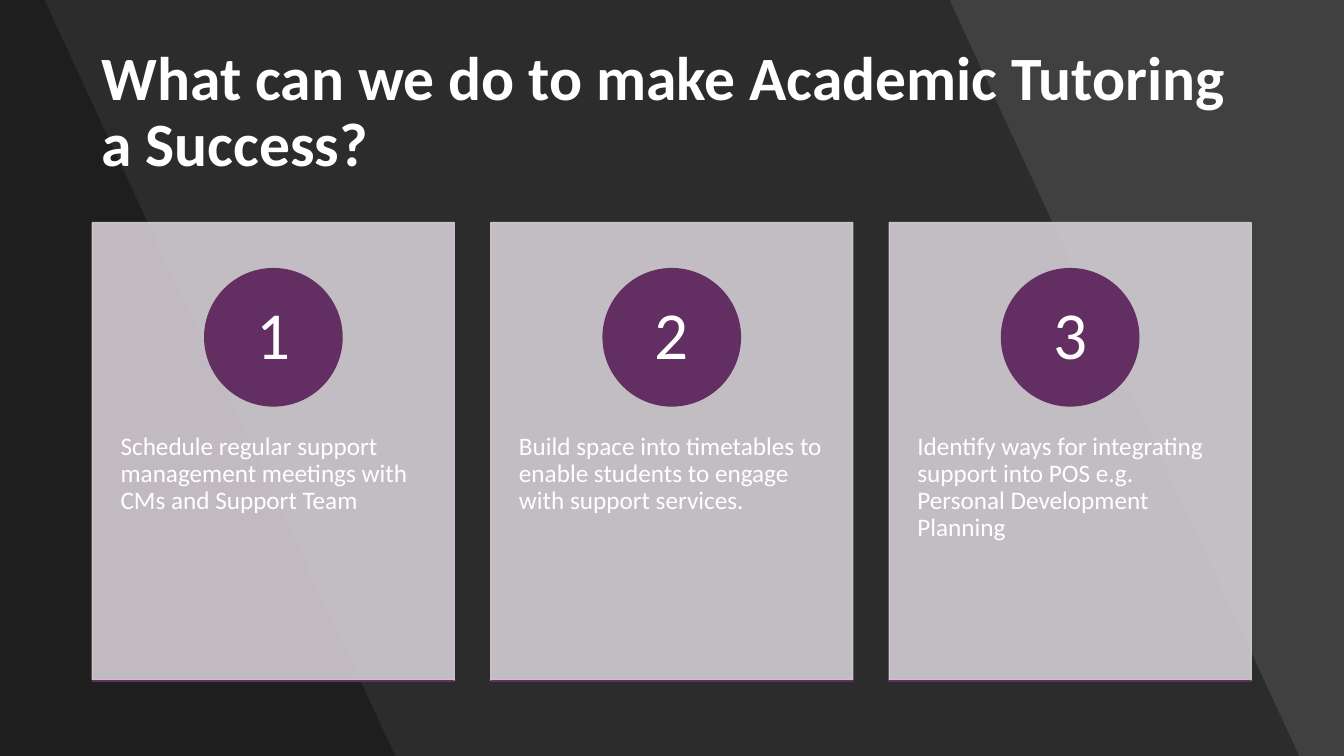
from lxml.etree import SubElement
from pptx import Presentation
from pptx.dml.color import RGBColor
from pptx.enum.shapes import MSO_CONNECTOR as Connector, MSO_SHAPE as Preset
from pptx.enum.text import MSO_ANCHOR as Anchor, PP_ALIGN as Align
from pptx.oxml.ns import qn
from pptx.util import Cm, Pt

WIDTH, HEIGHT = 33.87, 19.05
CARD_LEFT, CARD_TOP, CARD_WIDTH, CARD_HEIGHT = 2.33, 5.61, 9.12, 11.53
CARD_PITCH = 10.04
BADGE_SIZE = 3.46

ACTIONS = [
    "Schedule regular support management meetings with CMs and Support Team",
    "Build space into timetables to enable students to engage with support services.",
    "Identify ways for integrating support into POS e.g. Personal Development Planning",
]


def color(value):
    return RGBColor.from_string(value)


class Deck:
    font = "Calibri"
    background, shade, card, accent, text = "404040", "000000", "D3CDD3", "632E62", "FFFFFF"

    def __init__(self):
        self.presentation = Presentation()
        self.presentation.slide_width = Cm(WIDTH)
        self.presentation.slide_height = Cm(HEIGHT)
        self.slide = self.presentation.slides.add_slide(self.presentation.slide_layouts[6])
        backdrop = self.slide.background.fill
        backdrop.solid()
        backdrop.fore_color.rgb = color(self.background)

    def paint(self, shape, fill, outlined=True, opacity=100):
        shape.shadow.inherit = False
        shape.fill.solid()
        shape.fill.fore_color.rgb = color(fill)
        if outlined:
            shape.line.color.rgb = color(fill)
            shape.line.width = Pt(1)
        else:
            shape.line.fill.background()
        if opacity < 100:
            for tint in shape._element.spPr.iter(qn("a:srgbClr")):
                SubElement(tint, qn("a:alpha"), val=str(opacity * 1000))

    def slanted_band(self, top_edge, bottom_edge):
        outline = self.slide.shapes.build_freeform(0, 0, scale=1.0)
        corners = [(top_edge, 0), (bottom_edge, HEIGHT), (0, HEIGHT)]
        outline.add_line_segments([(Cm(x), Cm(y)) for x, y in corners], close=True)
        self.paint(outline.convert_to_shape(), self.shade, outlined=False, opacity=30)

    def preset(self, kind, left, top, width, height, fill, opacity=100):
        shape = self.slide.shapes.add_shape(kind, Cm(left), Cm(top), Cm(width), Cm(height))
        self.paint(shape, fill, opacity=opacity)
        return shape

    def rule(self, left, top, width):
        line = self.slide.shapes.add_connector(
            Connector.STRAIGHT, Cm(left), Cm(top), Cm(left + width), Cm(top))
        line.line.color.rgb = color(self.accent)
        line.line.width = Pt(1)
        SubElement(line._element.spPr, qn("a:effectLst"))

    def set_text(self, shape, words, size, anchor, align=Align.LEFT, bold=False, insets=(0.25, 0.13)):
        frame = shape.text_frame
        frame.word_wrap = True
        frame.vertical_anchor = anchor
        frame.margin_left = frame.margin_right = Cm(insets[0])
        frame.margin_top = frame.margin_bottom = Cm(insets[1])
        paragraph = frame.paragraphs[0]
        paragraph.text = words
        paragraph.alignment = align
        paragraph.line_spacing = 0.9
        paragraph.font.name = self.font
        paragraph.font.size = Pt(size)
        paragraph.font.bold = bold
        paragraph.font.color.rgb = color(self.text)

    def text_box(self, left, top, width, height, words, size, anchor, **style):
        box = self.slide.shapes.add_textbox(Cm(left), Cm(top), Cm(width), Cm(height))
        self.set_text(box, words, size, anchor, **style)

    def action_card(self, number, action):
        left = CARD_LEFT + (number - 1) * CARD_PITCH
        self.preset(Preset.RECTANGLE, left, CARD_TOP, CARD_WIDTH, CARD_HEIGHT, self.card, opacity=90)
        self.text_box(left, 10.01, CARD_WIDTH, 6.93, action, 18, Anchor.TOP, insets=(0.71, 0.91))
        badge = self.preset(Preset.OVAL, left + (CARD_WIDTH - BADGE_SIZE) / 2, 6.77,
                            BADGE_SIZE, BADGE_SIZE, self.accent)
        self.set_text(badge, str(number), 48, Anchor.MIDDLE, align=Align.CENTER, insets=(0.28, 0.03))
        self.rule(left, CARD_TOP + CARD_HEIGHT + 0.02, CARD_WIDTH)


def main():
    deck = Deck()
    deck.slanted_band(23.93, 32.74)
    deck.slanted_band(1.12, 9.96)
    deck.text_box(2.31, 1.02, 29.24, 3.68, "What can we do to make Academic Tutoring a Success?",
                  44, Anchor.MIDDLE, bold=True)
    for number, action in enumerate(ACTIONS, start=1):
        deck.action_card(number, action)
    deck.presentation.save("out.pptx")


if __name__ == "__main__":
    main()
